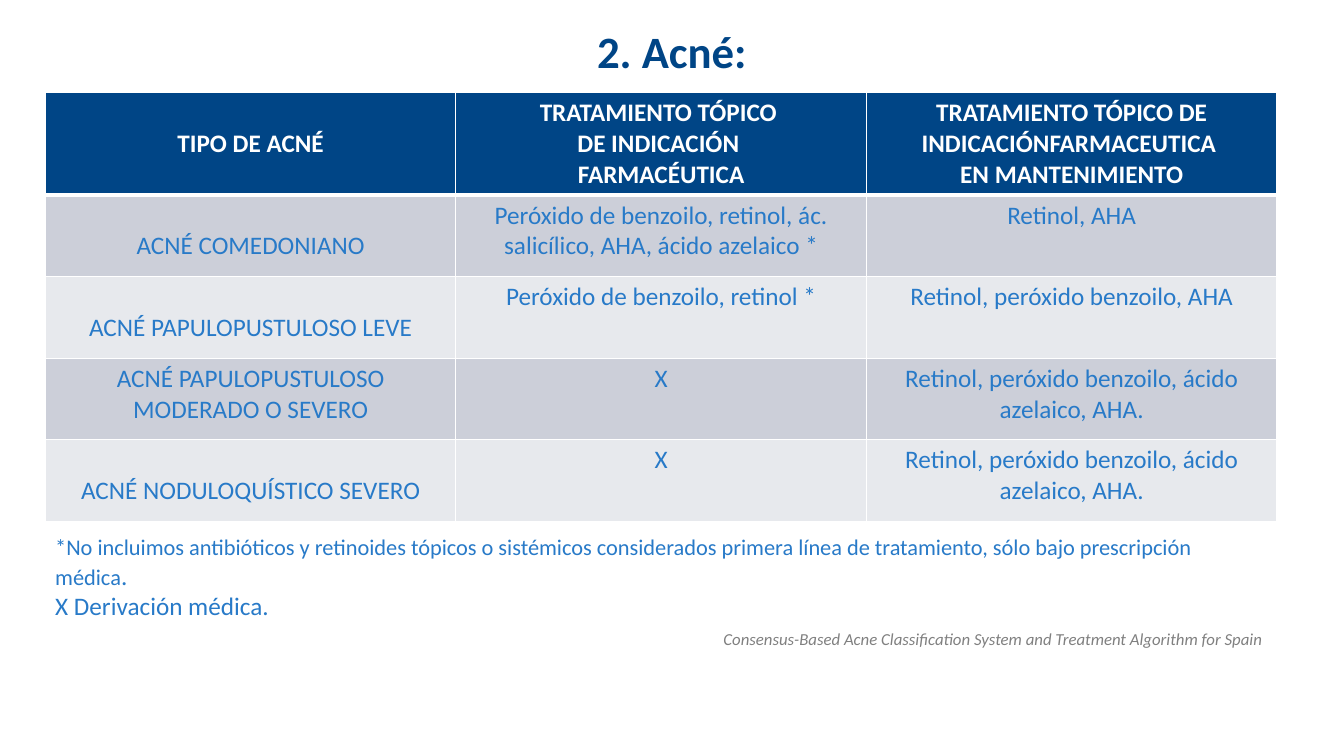
from dataclasses import dataclass

from lxml import etree
from pptx import Presentation
from pptx.dml.color import RGBColor
from pptx.enum import text
from pptx.oxml import ns
from pptx.util import Pt


@dataclass(frozen=True)
class Theme:
    font: str = "Calibri"
    navy: str = "004586"
    blue: str = "287AC8"
    grey: str = "808080"
    white: str = "FFFFFF"
    bands: tuple = ("CCCFD9", "E7E9ED")
    title: float = 32
    main: float = 18
    note: float = 16
    source: float = 12
    rule: float = 1
    header_rule: float = 3


LINE = 22  # height of one line of table text
HEADER_HEIGHT, ROW_HEIGHT = 73, 58.3

HEADER = [
    ["TIPO DE ACNÉ"],
    ["TRATAMIENTO TÓPICO ", "DE INDICACIÓN ", "FARMACÉUTICA"],
    ["TRATAMIENTO TÓPICO DE", "INDICACIÓNFARMACEUTICA ", "EN MANTENIMIENTO"],
]
TREATMENTS = [
    ["ACNÉ COMEDONIANO",
     "Peróxido de benzoilo, retinol, ác. salicílico, AHA, ácido azelaico *",
     "Retinol, AHA"],
    ["ACNÉ PAPULOPUSTULOSO LEVE",
     "Peróxido de benzoilo, retinol *",
     "Retinol, peróxido benzoilo, AHA"],
    ["ACNÉ PAPULOPUSTULOSO MODERADO O SEVERO",
     "X",
     "Retinol, peróxido benzoilo, ácido azelaico, AHA."],
    ["ACNÉ NODULOQUÍSTICO SEVERO",
     "X",
     "Retinol, peróxido benzoilo, ácido azelaico, AHA."],
]
LOWERED = {"TIPO DE ACNÉ", "ACNÉ COMEDONIANO", "ACNÉ PAPULOPUSTULOSO LEVE",
           "ACNÉ NODULOQUÍSTICO SEVERO"}


def write(paragraph, words, *, font, size, color, bold=False, italic=False,
          align=text.PP_ALIGN.LEFT):
    """Append one formatted run to the paragraph."""
    paragraph.alignment = align
    paragraph.space_before = Pt(0)
    run = paragraph.add_run()
    run.text = words
    run.font.name = font
    run.font.size = Pt(size)
    run.font.bold = bold
    run.font.italic = italic
    run.font.color.rgb = RGBColor.from_string(color)


def set_borders(cell, color, **widths):
    """Draw cell borders; widths are keyed by side: L, R, T, B."""
    properties = cell._tc.get_or_add_tcPr()
    for position, (side, width) in enumerate(widths.items()):
        line = etree.Element(ns.qn(f"a:ln{side}"), w=str(int(Pt(width))))
        fill = etree.SubElement(line, ns.qn("a:solidFill"))
        etree.SubElement(fill, ns.qn("a:srgbClr"), val=color)
        properties.insert(position, line)


def remove_bullet(paragraph):
    properties = paragraph._p.get_or_add_pPr()
    properties.set("marL", "0")
    properties.set("indent", "0")
    etree.SubElement(properties, ns.qn("a:buNone"))


class SlideBuilder:
    def __init__(self, slide, theme):
        self.slide = slide
        self.theme = theme

    def place(self, shape, left, top, width, height):
        shape.left, shape.top = Pt(left), Pt(top)
        shape.width, shape.height = Pt(width), Pt(height)
        shape.text_frame.auto_size = text.MSO_AUTO_SIZE.NONE

    def title(self, words, *box):
        heading = self.slide.shapes.title
        self.place(heading, *box)
        heading.text_frame.vertical_anchor = text.MSO_ANCHOR.MIDDLE
        write(heading.text_frame.paragraphs[0], words, font=self.theme.font,
              size=self.theme.title, color=self.theme.navy, bold=True,
              align=text.PP_ALIGN.CENTER)

    def source(self, words, *box):
        citation = self.slide.placeholders[1]
        self.place(citation, *box)
        citation.text_frame.vertical_anchor = text.MSO_ANCHOR.TOP
        paragraph = citation.text_frame.paragraphs[0]
        remove_bullet(paragraph)
        write(paragraph, words, font=self.theme.font, size=self.theme.source,
              color=self.theme.grey, italic=True, align=text.PP_ALIGN.RIGHT)

    def footnote(self, lines, *box):
        """Write lines, each a list of (words, size) pairs."""
        note = self.slide.shapes.add_textbox(*map(Pt, box))
        frame = note.text_frame
        frame.word_wrap = False
        frame.vertical_anchor = text.MSO_ANCHOR.MIDDLE
        for number, line in enumerate(lines):
            paragraph = frame.add_paragraph() if number else frame.paragraphs[0]
            for words, size in line:
                write(paragraph, words, font=self.theme.font, size=size,
                      color=self.theme.blue)

    def cell(self, cell, lines, *, fill, color, bold, top_rule, bottom_rule):
        theme = self.theme
        cell.fill.solid()
        cell.fill.fore_color.rgb = RGBColor.from_string(fill)
        set_borders(cell, theme.white, L=theme.rule, R=theme.rule,
                    T=top_rule, B=bottom_rule)
        cell.margin_top = Pt(3.6 + LINE * (lines[0] in LOWERED))
        frame = cell.text_frame
        for number, words in enumerate(lines):
            paragraph = frame.add_paragraph() if number else frame.paragraphs[0]
            write(paragraph, words, font=theme.font, size=theme.main,
                  color=color, bold=bold, align=text.PP_ALIGN.CENTER)

    def table(self, header, treatments, left, top, width):
        theme = self.theme
        height = HEADER_HEIGHT + ROW_HEIGHT * len(treatments)
        grid = self.slide.shapes.add_table(
            len(treatments) + 1, len(header),
            Pt(left), Pt(top), Pt(width), Pt(height)).table
        for column in grid.columns:
            column.width = Pt(width / len(header))
        for row in grid.rows:
            row.height = Pt(ROW_HEIGHT)
        grid.rows[0].height = Pt(HEADER_HEIGHT)

        for column, lines in enumerate(header):
            self.cell(grid.cell(0, column), lines, fill=theme.navy,
                      color=theme.white, bold=True,
                      top_rule=theme.rule, bottom_rule=theme.header_rule)
        for row, treatment in enumerate(treatments):
            for column, words in enumerate(treatment):
                self.cell(grid.cell(row + 1, column), [words],
                          fill=theme.bands[row % 2], color=theme.blue, bold=False,
                          top_rule=theme.rule if row else theme.header_rule,
                          bottom_rule=theme.rule)


def main():
    deck = Presentation()
    deck.slide_width, deck.slide_height = Pt(960), Pt(540)
    theme = Theme()
    acne = SlideBuilder(deck.slides.add_slide(deck.slide_layouts[1]), theme)
    acne.title("2. Acné:", 48, 12, 864, 48)
    acne.table(HEADER, TREATMENTS, 32.4, 66.2, 879.8)
    acne.source("Consensus-Based Acne Classification System and Treatment "
                "Algorithm for Spain ", 0, 445.7, 912, 23)
    acne.footnote([
        [("*No incluimos antibióticos y retinoides tópicos o sistémicos "
          "considerados primera línea de tratamiento, sólo bajo "
          "prescripción médica", theme.note), (".", theme.main)],
        [("X Derivación médica.", theme.main)],
    ], 32.4, 398.2, 873.4, 28)
    deck.save("out.pptx")


if __name__ == "__main__":
    main()
